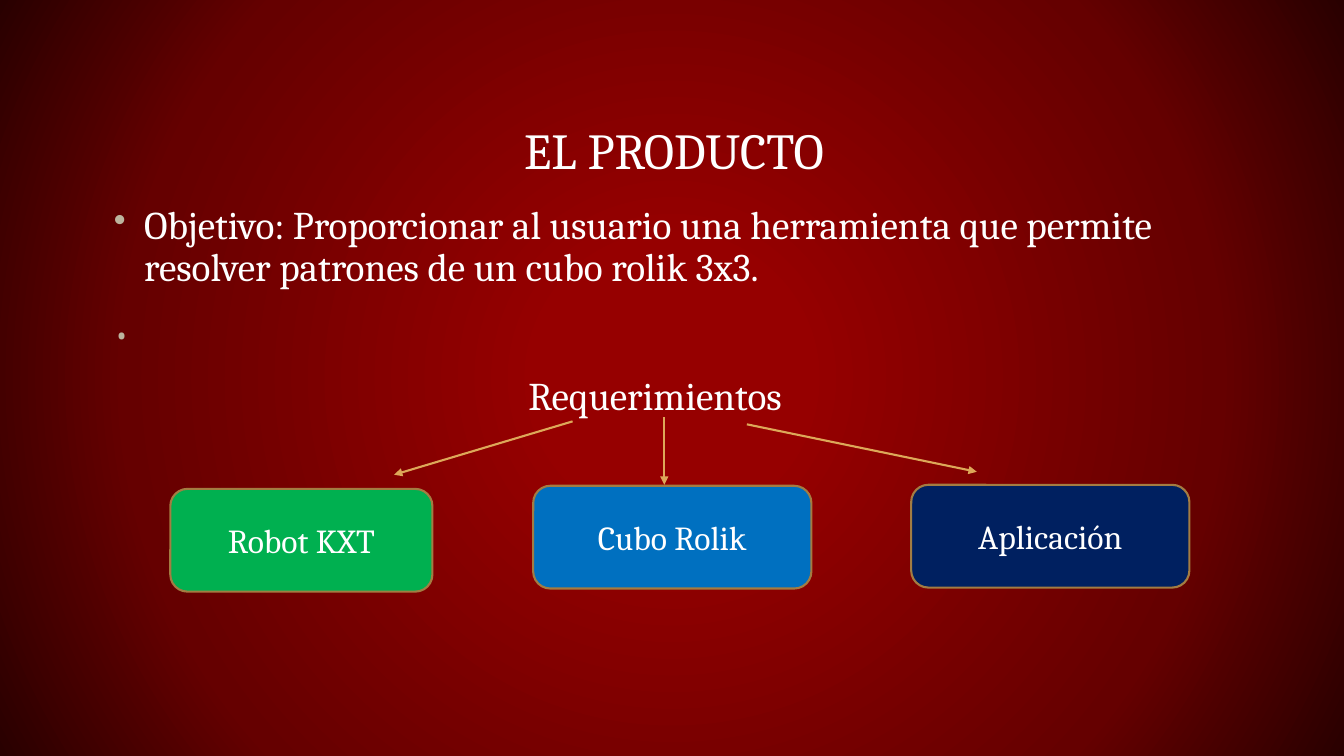
from dataclasses import dataclass
from pptx import Presentation, util as u
from pptx.dml.color import RGBColor
from pptx.enum import shapes, text
from pptx.oxml import parse_xml
from pptx.oxml.ns import nsdecls, qn


@dataclass(frozen=True)
class Theme:
    font: str = "Cambria"
    title: float = 36
    body: float = 28
    label: float = 24
    mark: float = 25
    white: str = "FFFFFF"
    bullet: str = "BCB49E"
    edge: str = "A37C42"
    arrow: str = "DDA859"
    green: str = "00B050"
    blue: str = "0070C0"
    navy: str = "002060"
    glow: tuple = ((17, "960000"), (71, "650000"), (100, "290000"))


def put(obj, vals):
    for key, val in vals.items():
        setattr(obj, key, val)


def nodes(xml):
    """Turn DrawingML text without namespaces into a list of elements."""
    return list(parse_xml(f"<a:root {nsdecls('a')}>{xml}</a:root>"))


class Deck:
    def __init__(self, theme):
        self.theme = theme
        self.prs = Presentation()
        put(self.prs, {"slide_width": u.Pt(960), "slide_height": u.Pt(540)})
        self.slide = self.prs.slides.add_slide(self.prs.slide_layouts[6])

    def glow(self):
        """Fill the background with a circular gradient."""
        self.slide.background.fill.gradient()
        old = self.slide.element.find(".//" + qn("a:gradFill"))
        stops = "".join(
            f'<a:gs pos="{pos * 1000}"><a:srgbClr val="{tint}"/></a:gs>'
            for pos, tint in self.theme.glow)
        new = nodes(
            f'<a:gradFill rotWithShape="1"><a:gsLst>{stops}</a:gsLst>'
            '<a:path path="circle"><a:fillToRect l="50000" t="50000" '
            'r="50000" b="50000"/></a:path></a:gradFill>')[0]
        old.getparent().replace(old, new)

    def say(self, para, words, size, tint=None, form=None):
        put(para, form or {})
        run = para.add_run()
        run.text = words
        put(run.font, {"name": self.theme.font, "size": u.Pt(size)})
        run.font.color.rgb = RGBColor.from_string(tint or self.theme.white)

    def indent(self, para, left, first=0):
        prop = para._p.get_or_add_pPr()
        prop.set("marL", str(u.Pt(left)))
        prop.set("indent", str(u.Pt(first)))

    def bullet(self, para):
        self.indent(para, 21.6, -21.6)
        para._p.get_or_add_pPr().extend(nodes(
            f'<a:buClr><a:srgbClr val="{self.theme.bullet}"/></a:buClr>'
            '<a:buSzPct val="90000"/><a:buChar char="•"/>'))

    def frame(self, box, anchor):
        """Add a wrapping text box and return its text frame."""
        area = self.slide.shapes.add_textbox(*map(u.Pt, box)).text_frame
        put(area, {"word_wrap": True, "vertical_anchor": anchor,
                   "margin_left": u.Pt(9.4), "margin_right": u.Pt(9.4),
                   "margin_top": u.Pt(5), "margin_bottom": u.Pt(5)})
        return area

    def card(self, box, words, tint):
        card = self.slide.shapes.add_shape(
            shapes.MSO_SHAPE.ROUNDED_RECTANGLE, *map(u.Pt, box))
        card.shadow.inherit = False
        card.fill.solid()
        card.fill.fore_color.rgb = RGBColor.from_string(tint)
        card.line.color.rgb = RGBColor.from_string(self.theme.edge)
        card.line.width = u.Pt(1.5)
        put(card.text_frame, {"word_wrap": True,
                              "vertical_anchor": text.MSO_ANCHOR.MIDDLE})
        self.say(card.text_frame.paragraphs[0], words, self.theme.label,
                 form={"alignment": text.PP_ALIGN.CENTER})

    def arrow(self, start, end):
        line = self.slide.shapes.add_connector(
            shapes.MSO_CONNECTOR.STRAIGHT, *map(u.Pt, start + end))
        line.line.color.rgb = RGBColor.from_string(self.theme.arrow)
        line.line.width = u.Pt(1.5)
        prop = line._element.spPr
        prop.find(qn("a:ln")).extend(nodes('<a:tailEnd type="triangle"/>'))
        prop.extend(nodes("<a:effectLst/>"))


def main():
    theme = Theme()
    deck = Deck(theme)
    deck.glow()

    tight = {"line_spacing": 0.9}
    title = deck.frame((72, 38.2, 816, 95.8), text.MSO_ANCHOR.BOTTOM)
    deck.say(title.paragraphs[0], "EL PRODUCTO", theme.title, form=tight)
    deck.indent(title.paragraphs[0], 293)

    body = deck.frame((72, 141.8, 816, 352), text.MSO_ANCHOR.TOP)
    spaced = {**tight, "space_before": u.Pt(16)}
    goal = body.paragraphs[0]
    deck.say(goal, "Objetivo: Proporcionar al usuario una herramienta que "
             "permite resolver patrones de un cubo rolik 3x3.",
             theme.body, form=spaced)
    deck.bullet(goal)
    deck.say(body.add_paragraph(), "•", theme.mark, theme.bullet,
             {**tight, "space_before": u.Pt(19)})
    needs = body.add_paragraph()
    deck.say(needs, "Requerimientos", theme.body, form=spaced)
    deck.indent(needs, 296)

    for left, top, width, words, tint in (
            (121.7, 349.2, 187.2, "Robot KXT", theme.green),
            (380.9, 347, 198.7, "Cubo Rolik", theme.blue),
            (650.9, 346.3, 198.7, "Aplicación", theme.navy)):
        deck.card((left, top, width, 73.4), words, tint)

    for start, end in (((533.5, 303.1), (697.7, 337)),
                       ((474.5, 298.1), (474.5, 346.3)),
                       ((409, 301), (281.5, 339.1))):
        deck.arrow(start, end)

    deck.prs.save("out.pptx")


if __name__ == "__main__":
    main()
